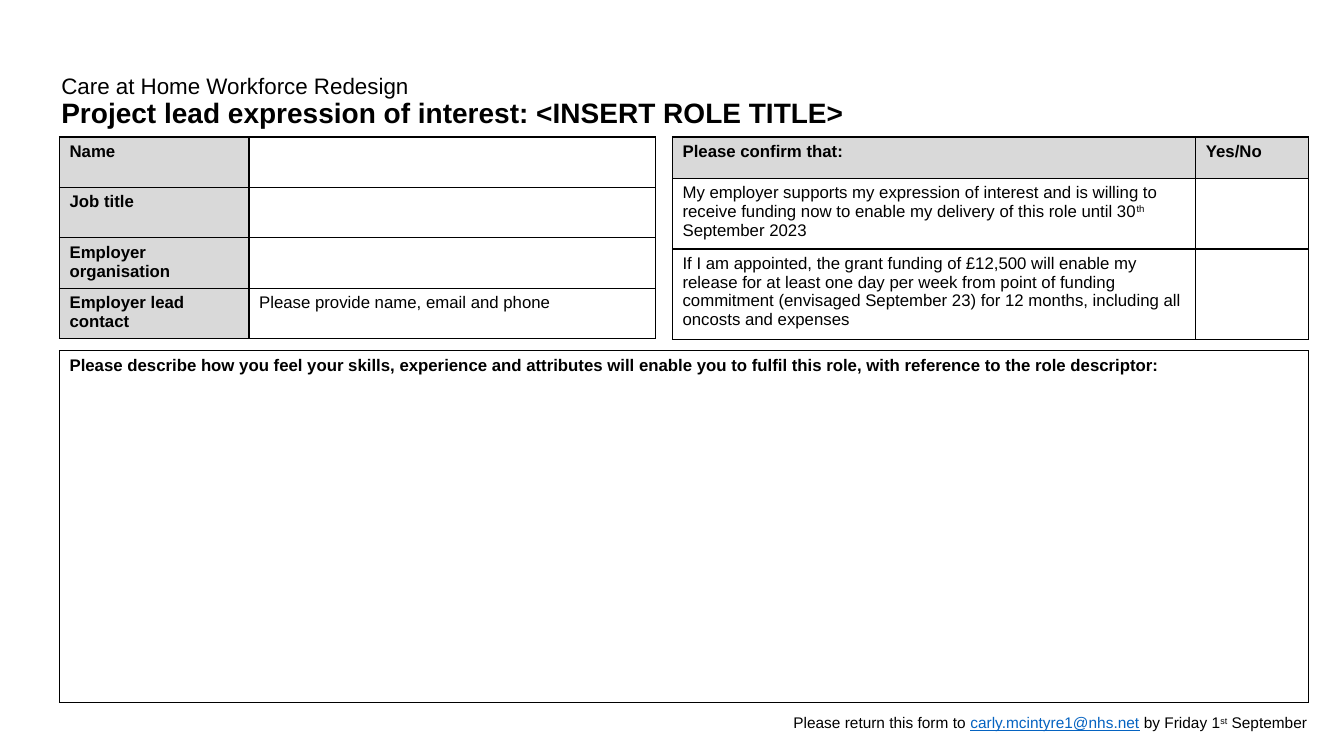
"""Build the expression of interest form for a project lead role."""
from dataclasses import dataclass, field

from lxml.etree import SubElement
from pptx import Presentation
from pptx.dml.color import RGBColor
from pptx.enum.text import MSO_ANCHOR
from pptx.oxml.ns import qn
from pptx.util import Pt

EMU_PER_PX = 9144
BLACK, GREY, LINK_BLUE = "000000", "D9D9D9", "0563C1"


@dataclass(frozen=True)
class Span:
    text: str
    size: int = 12
    bold: bool = False
    underline: bool = False
    color: str = BLACK
    raised: bool = False
    breaks: bool = False


@dataclass(frozen=True)
class Cell:
    spans: tuple[Span, ...] = ()
    fill: str | None = None


@dataclass(frozen=True)
class Grid:
    left: int
    top: int
    columns: tuple[int, ...]
    rows: tuple[int, ...]
    cells: list[list[Cell]]


@dataclass(frozen=True)
class Label:
    left: int
    top: int
    width: int
    height: int
    spans: tuple[Span, ...]
    frame: dict = field(default_factory=dict)
    line_spacing: float = 1.0


def px(length: int) -> int:
    """Turn px into EMU."""
    return length * EMU_PER_PX


def rgb(color: str) -> RGBColor:
    """Turn a hex string into a colour."""
    return RGBColor.from_string(color)


def apply(target, values: dict) -> None:
    """Set each named attribute on the target."""
    for name, value in values.items():
        setattr(target, name, value)


def write(para, spans: tuple[Span, ...]) -> None:
    """Add formatted spans to a paragraph."""
    for span in spans:
        run = para.add_run()
        run.text = span.text
        apply(run.font, {"name": "Arial", "size": Pt(span.size),
                         "bold": span.bold, "underline": span.underline})
        run.font.color.rgb = rgb(span.color)
        if span.raised:
            run._r.get_or_add_rPr().set("baseline", "30000")
        if span.breaks:
            para.add_line_break()


def add_borders(cell) -> None:
    """Draw a thin black line on every side of a cell."""
    properties = cell._tc.get_or_add_tcPr()
    for side in ("lnL", "lnR", "lnT", "lnB"):
        line = SubElement(properties, qn(f"a:{side}"), w=str(Pt(1)))
        fill = SubElement(line, qn("a:solidFill"))
        SubElement(fill, qn("a:srgbClr"), val=BLACK)


def add_grid(page, grid: Grid) -> None:
    """Add a bordered table."""
    table = page.shapes.add_table(
        len(grid.rows), len(grid.columns), px(grid.left), px(grid.top),
        px(sum(grid.columns)), px(sum(grid.rows))).table
    apply(table, {"first_row": False, "horz_banding": False})
    for column, width in zip(table.columns, grid.columns):
        column.width = px(width)
    for row, height, contents in zip(table.rows, grid.rows, grid.cells):
        row.height = px(height)
        for cell, content in zip(row.cells, contents):
            add_borders(cell)
            if content.fill:
                cell.fill.solid()
                cell.fill.fore_color.rgb = rgb(content.fill)
            else:
                cell.fill.background()
            write(cell.text_frame.paragraphs[0], content.spans)


def add_label(page, label: Label) -> None:
    """Add a text box."""
    box = page.shapes.add_textbox(
        px(label.left), px(label.top), px(label.width), px(label.height))
    apply(box.text_frame, {"word_wrap": True} | label.frame)
    para = box.text_frame.paragraphs[0]
    para.line_spacing = label.line_spacing
    write(para, label.spans)


def heading(text: str) -> Cell:
    """Make a grey cell with bold text."""
    return Cell((Span(text, bold=True),), GREY)


LABELS = [
    Label(51, 40, 863, 124, (
        Span("Care at Home Workforce Redesign", 16, breaks=True),
        Span("Project lead expression of interest: <INSERT ROLE TITLE>", 20, bold=True),
    ), {"vertical_anchor": MSO_ANCHOR.MIDDLE}, 0.9),
    Label(777, 703, 548, 47, (
        Span("Please return this form to ", 11),
        Span("carly.mcintyre1@nhs.net", 11, underline=True, color=LINK_BLUE),
        Span(" by Friday 1", 11),
        Span("st", 11, raised=True),
        Span(" September", 11),
    )),
]

GRIDS = [
    Grid(59, 136, (188, 403), (50,) * 4, [
        [heading("Name"), Cell()],
        [heading("Job title"), Cell()],
        [heading("Employer organisation"), Cell()],
        [heading("Employer lead contact"),
         Cell((Span("Please provide name, email and phone"),))],
    ]),
    Grid(667, 136, (519, 112), (41, 67, 84), [
        [heading("Please confirm that:"), heading("Yes/No")],
        [Cell((
            Span("My employer supports my expression of interest and is willing to "
                 "receive funding now to enable my delivery of this role until 30"),
            Span("th", raised=True),
            Span(" September 2023"),
        )), Cell()],
        [Cell((
            Span("If I am appointed, the grant funding of £12,500 will enable my "
                 "release for at least one day per week from point of funding "
                 "commitment (envisaged September 23) for 12 months, including all "
                 "oncosts and expenses"),
        )), Cell()],
    ]),
    Grid(59, 348, (1239,), (349,), [
        [Cell((
            Span("Please describe how you feel your skills, experience and attributes "
                 "will enable you to fulfil this role, with reference to the role "
                 "descriptor:", bold=True),
        ))],
    ]),
]


def main() -> None:
    """Build and save the deck."""
    deck = Presentation()
    apply(deck, {"slide_width": px(1333), "slide_height": px(750)})
    page = deck.slides.add_slide(deck.slide_layouts[6])
    title, footer = LABELS
    add_label(page, title)
    for grid in GRIDS:
        add_grid(page, grid)
    add_label(page, footer)
    deck.save("out.pptx")


if __name__ == "__main__":
    main()
